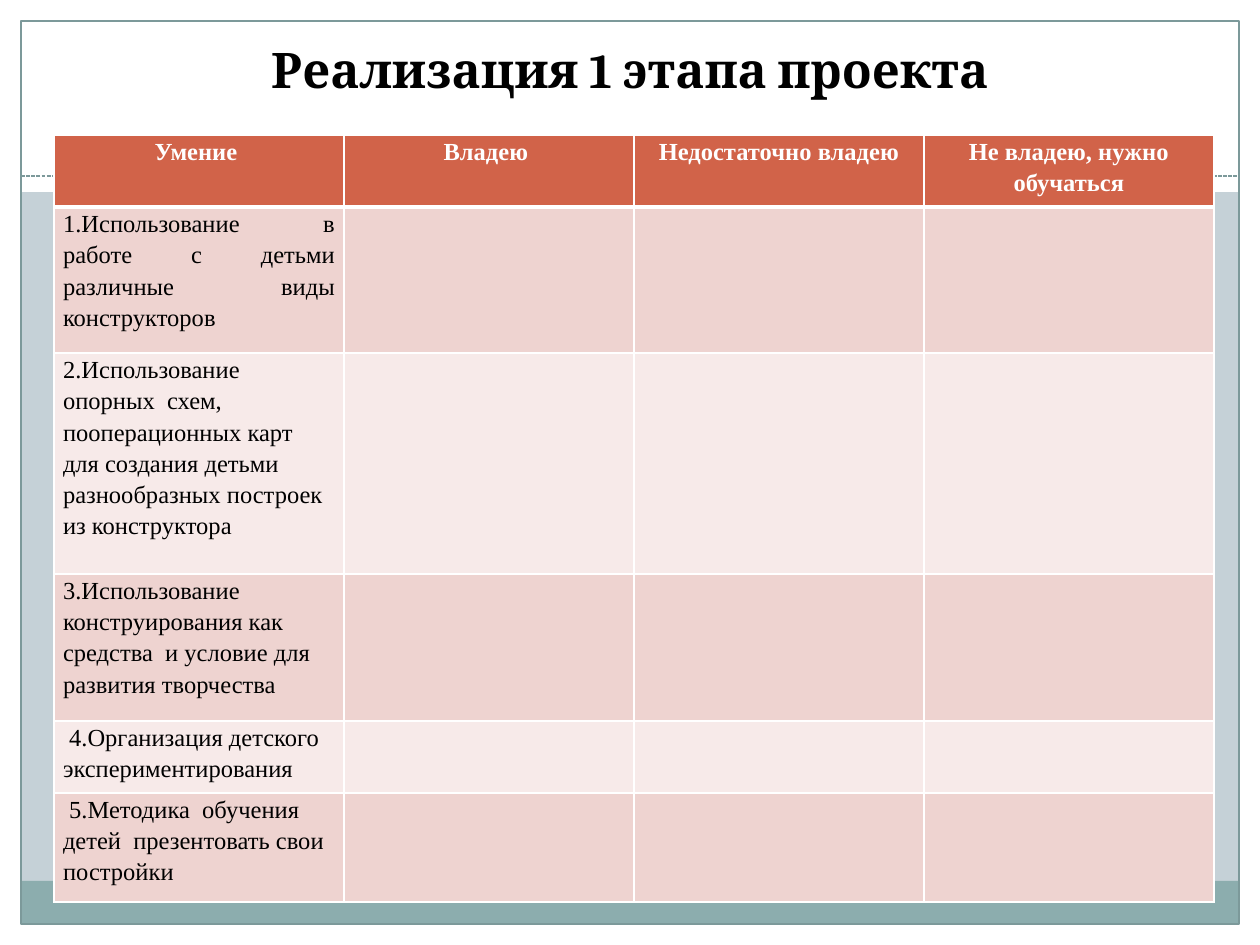
from lxml import etree
from pptx import Presentation
from pptx.dml.color import RGBColor
from pptx.enum.dml import MSO_LINE
from pptx.enum.shapes import MSO_CONNECTOR, MSO_SHAPE
from pptx.enum.text import MSO_ANCHOR, PP_ALIGN
from pptx.oxml.ns import qn
from pptx.util import Pt

RECT, STRAIGHT = MSO_SHAPE.RECTANGLE, MSO_CONNECTOR.STRAIGHT
LEFT, CENTER, JUSTIFY = PP_ALIGN.LEFT, PP_ALIGN.CENTER, PP_ALIGN.JUSTIFY

PX = 914400 // 126
WIDTH, HEIGHT, MARGIN = 1260, 945, 21
COLORS = {"back": "C5D1D7", "white": "FFFFFF", "band": "8CADAE", "frame": "7C999A",
          "header": "D16349", "odd": "EED3D0", "even": "F7EAE9", "text": "000000"}

TITLE = "Реализация 1 этапа проекта"
HEADERS = ["Умение ", "Владею ", "Недостаточно владею", "Не владею, нужно обучаться"]
SKILLS = [  # text, alignment, row height
    ("1.Использование   в работе с детьми различные виды конструкторов", JUSTIFY, 146),
    ("2.Использование  опорных  схем, пооперационных карт  для создания детьми "
     "разнообразных построек из конструктора", LEFT, 221),
    ("3.Использование конструирования как средства  и условие для развития творчества",
     LEFT, 147),
    (" 4.Организация детского экспериментирования", LEFT, 72),
    (" 5.Методика  обучения детей  презентовать свои постройки", LEFT, 109),
]
HEADER_HEIGHT, COLUMN_WIDTH = 72, 290
TABLE_LEFT, TABLE_TOP = 54, 135
TITLE_BOX = {"left": 42, "top": 31, "width": 1176, "height": 74}
PANELS = [  # box, fill
    ((0, HEIGHT - MARGIN, WIDTH, MARGIN), "white"),
    ((0, 0, WIDTH, 192), "white"),
    ((0, 0, MARGIN, HEIGHT), "white"),
    ((WIDTH - MARGIN, 0, MARGIN, HEIGHT), "white"),
    ((MARGIN, 881, WIDTH - 2 * MARGIN, 43), "band"),
]


def rgb(name):
    return RGBColor.from_string(COLORS[name])


def px(*values):
    return [v * PX for v in values]


def add_rect(slide, box, fill=None):
    """Add a filled panel, or an outlined frame when no fill is given."""
    sp = slide.shapes.add_shape(RECT, *px(*box))
    sp.shadow.inherit = False
    if fill:
        sp.fill.solid()
        sp.fill.fore_color.rgb = rgb(fill)
        sp.line.fill.background()
    else:
        sp.fill.background()
        sp.line.color.rgb = rgb("frame")
        sp.line.width = Pt(0.75)


def write(tf, text, font, size, color, bold, align, spacing=None):
    p = tf.paragraphs[0]
    p.alignment, p.line_spacing = align, spacing
    r = p.add_run()
    r.text = text
    for key, value in {"name": font, "size": Pt(size), "bold": bold}.items():
        setattr(r.font, key, value)
    r.font.color.rgb = rgb(color)


def style_cell(cell, fill, top, bottom):
    """Set white borders (top and bottom widths in points), then the fill."""
    tc_pr = cell._tc.get_or_add_tcPr()
    for side, width in {"L": 1, "R": 1, "T": top, "B": bottom}.items():
        ln = etree.SubElement(tc_pr, qn("a:ln" + side), w=str(Pt(width)))
        solid = etree.SubElement(ln, qn("a:solidFill"))
        etree.SubElement(solid, qn("a:srgbClr"), val=COLORS["white"])
    cell.fill.solid()
    cell.fill.fore_color.rgb = rgb(fill)
    cell.margin_left = cell.margin_right = 9 * PX
    cell.margin_top = cell.margin_bottom = 0


def add_skill_table(slide):
    heights = [HEADER_HEIGHT] + [height for _, _, height in SKILLS]
    columns = len(HEADERS)
    table = slide.shapes.add_table(len(heights), columns, *px(
        TABLE_LEFT, TABLE_TOP, columns * COLUMN_WIDTH, sum(heights))).table
    for column in table.columns:
        column.width = COLUMN_WIDTH * PX
    for i, height in enumerate(heights):
        table.rows[i].height = height * PX
        fill = "header" if i == 0 else "odd" if i % 2 else "even"
        for cell in table.rows[i].cells:
            style_cell(cell, fill, 3 if i == 1 else 1, 3 if i == 0 else 1)
    for c, text in enumerate(HEADERS):
        write(table.cell(0, c).text_frame, text, "Times New Roman", 14, "white",
              True, CENTER, 1.15)
    for i, (text, align, _) in enumerate(SKILLS, 1):
        write(table.cell(i, 0).text_frame, text, "Times New Roman", 14, "text",
              False, align, 1.15)


def main():
    prs = Presentation()
    prs.slide_width, prs.slide_height = px(WIDTH, HEIGHT)
    slide = prs.slides.add_slide(prs.slide_layouts[5])
    slide.background.fill.solid()
    slide.background.fill.fore_color.rgb = rgb("back")

    for box, fill in PANELS:
        add_rect(slide, box, fill)
    add_rect(slide, (MARGIN, MARGIN, WIDTH - 2 * MARGIN, HEIGHT - 2 * MARGIN))
    rule = slide.shapes.add_connector(STRAIGHT, *px(MARGIN, 176, WIDTH - MARGIN, 176))
    rule.line.color.rgb = rgb("frame")
    rule.line.width = Pt(0.75)
    rule.line.dash_style = MSO_LINE.SQUARE_DOT
    etree.SubElement(rule._element.spPr, qn("a:effectLst"))

    title = slide.shapes.title
    for key, value in TITLE_BOX.items():
        setattr(title, key, value * PX)
    title.text_frame.vertical_anchor = MSO_ANCHOR.BOTTOM
    write(title.text_frame, TITLE, "Cambria", 28, "text", True, CENTER)
    slide.shapes._spTree.append(title._element)  # in front of the panels

    add_skill_table(slide)
    prs.save("out.pptx")


if __name__ == "__main__":
    main()
